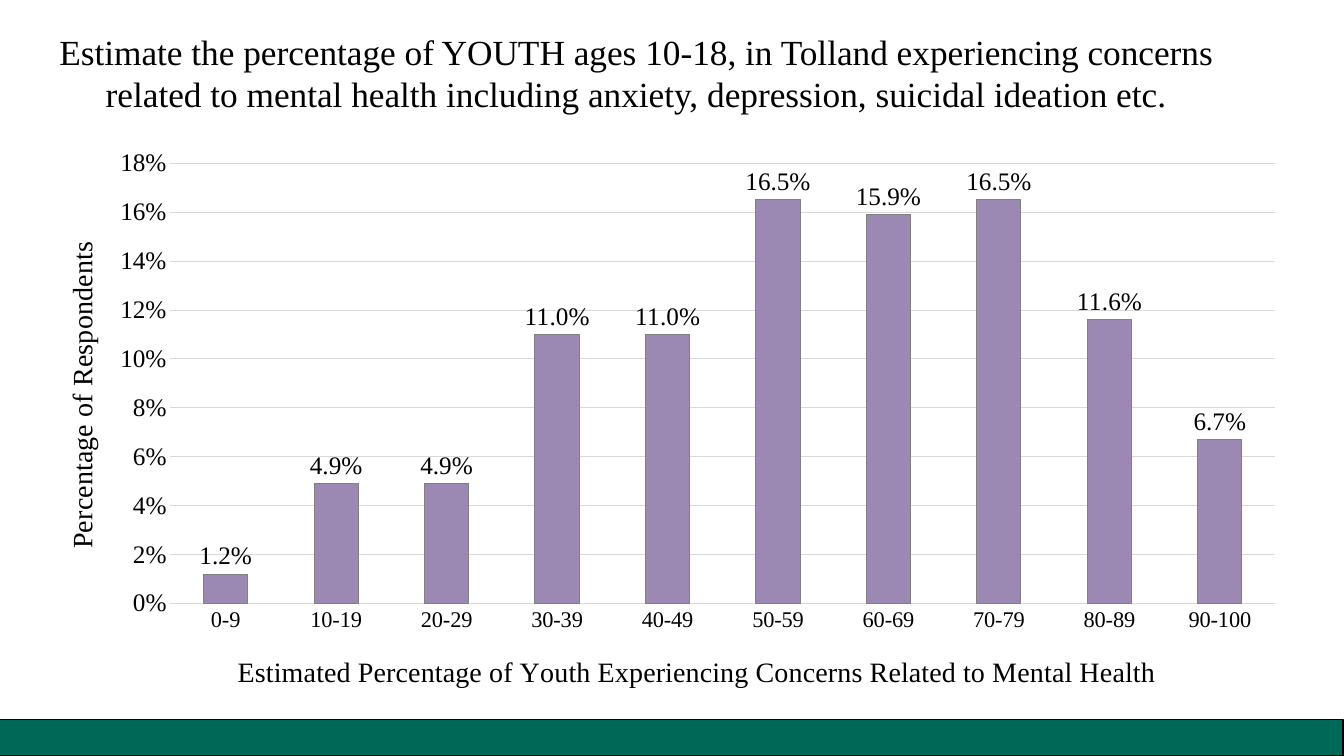
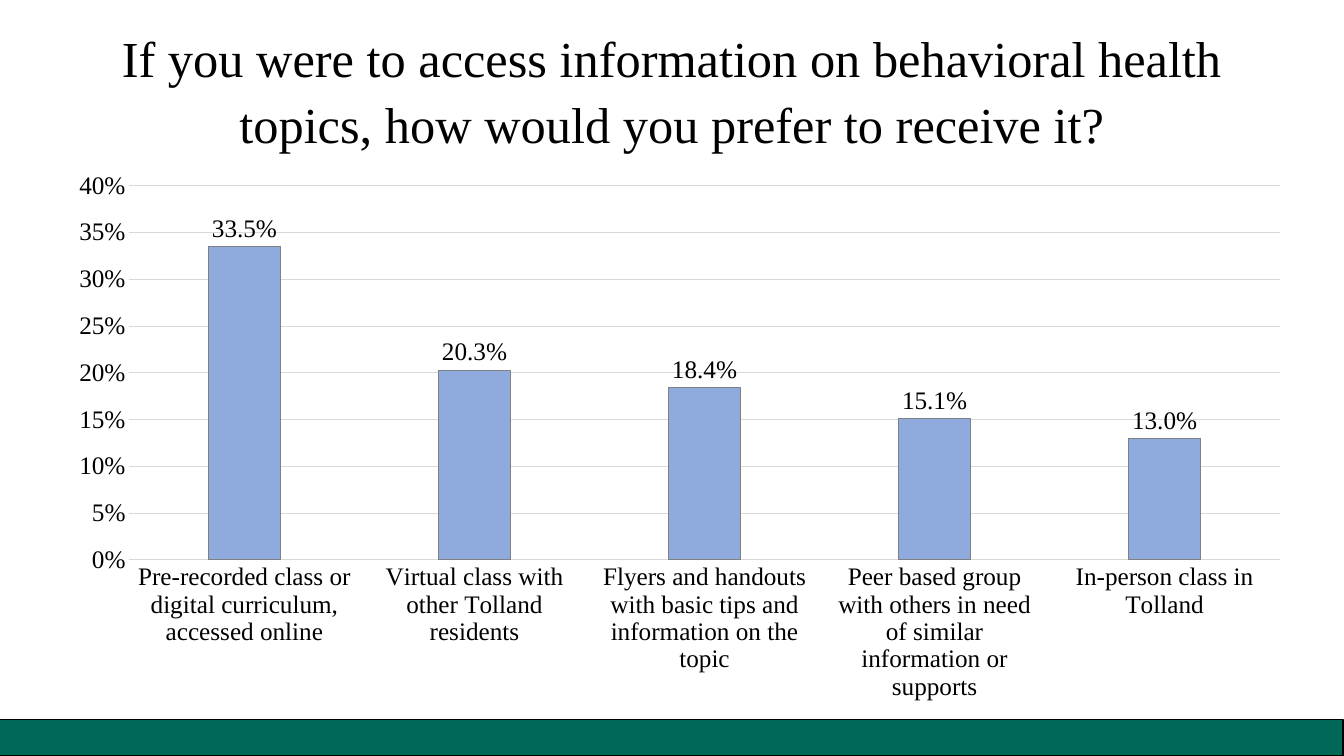
import pptx
import pptx.chart.data
import pptx.dml.color
import pptx.enum.chart
import pptx.enum.shapes
import pptx.enum.text
import pptx.oxml
import pptx.oxml.ns
import pptx.util

Inches = pptx.util.Inches
Pt = pptx.util.Pt
RGBColor = pptx.dml.color.RGBColor
qn = pptx.oxml.ns.qn

BLACK = RGBColor(0x00, 0x00, 0x00)
GREEN = RGBColor(0x00, 0x68, 0x57)
PURPLE = RGBColor(0x9B, 0x89, 0xB3)
BLUE = RGBColor(0x8F, 0xAA, 0xDC)
GRID = RGBColor(0xD9, 0xD9, 0xD9)
OUTLINE = RGBColor(0x80, 0x80, 0x80)
FONT = "Times New Roman"
TITLE_ONLY = 5


def set_font(font, size):
    font.name = FONT
    font.size = Pt(size)
    font.bold = False
    font.color.rgb = BLACK


def set_line(line, color, width=0.75):
    line.color.rgb = color
    line.width = Pt(width)


def set_layout(parent, **fractions):
    """Place a chart part by fractions of the chart's width and height."""
    layout = parent.find(qn("c:layout"))
    if layout is None:
        layout = pptx.oxml.parse_xml(
            '<c:layout xmlns:c="%s"/>' % pptx.oxml.ns.nsuri("c"))
        parent.insert(0 if parent.find(qn("c:tx")) is None else 1, layout)
    manual = layout.makeelement(qn("c:manualLayout"), {})
    layout.append(manual)
    settings = {"xMode": "edge", "yMode": "edge", **fractions}
    if "w" in fractions:
        settings = {"layoutTarget": "inner", **settings}
    for tag, value in settings.items():
        manual.append(manual.makeelement(qn("c:" + tag), {"val": str(value)}))


def add_slide(prs, title, left, top, size, spacing, anchor):
    s = prs.slides.add_slide(prs.slide_layouts[TITLE_ONLY])
    band = s.shapes.add_shape(
        pptx.enum.shapes.MSO_SHAPE.RECTANGLE,
        Inches(-0.01), Inches(7.14), Inches(13.33), Inches(0.36))
    band.shadow.inherit = False
    band.fill.solid()
    band.fill.fore_color.rgb = GREEN
    set_line(band.line, BLACK, 1)

    sp = s.shapes.title
    sp.left, sp.top = Inches(left), Inches(top)
    sp.width, sp.height = Inches(11.71), Inches(1.43)
    tf = sp.text_frame
    tf.text = title
    tf.word_wrap = True
    tf.auto_size = pptx.enum.text.MSO_AUTO_SIZE.NONE
    tf.vertical_anchor = anchor
    p = tf.paragraphs[0]
    p.alignment = pptx.enum.text.PP_ALIGN.CENTER
    p.line_spacing = spacing
    set_font(p.font, size)
    return s


def add_axis_title(axis, text, x, y, rotation=0):
    tf = axis.axis_title.text_frame
    tf.text = text
    set_font(tf.paragraphs[0].font, 20)
    title = axis.axis_title._element
    body = next(title.iter(qn("a:bodyPr")))
    body.set("rot", str(rotation * 60000))
    body.set("vert", "horz")
    set_layout(title, x=x, y=y)


def add_column_chart(s, box, values, color, gap, overlap, top, step, plot_box,
                     category_size=18):
    data = pptx.chart.data.CategoryChartData(number_format="0.0%")
    data.categories = list(values)
    data.add_series("Series 1", list(values.values()))
    chart = s.shapes.add_chart(
        pptx.enum.chart.XL_CHART_TYPE.COLUMN_CLUSTERED,
        *map(Inches, box), data).chart
    chart.has_legend = False
    chart.has_title = False
    set_font(chart.font, 18)

    tick_mark = pptx.enum.chart.XL_TICK_MARK
    for axis, size in ((chart.category_axis, category_size),
                       (chart.value_axis, 18)):
        axis.major_tick_mark = tick_mark.NONE
        axis.minor_tick_mark = tick_mark.NONE
        set_font(axis.tick_labels.font, size)
    set_line(chart.category_axis.format.line, GRID)

    axis = chart.value_axis
    axis.minimum_scale, axis.maximum_scale, axis.major_unit = 0, top, step
    axis.format.line.fill.background()
    set_line(axis.major_gridlines.format.line, GRID)
    axis.tick_labels.number_format = "0%"
    axis.tick_labels.number_format_is_linked = False

    plot = chart.plots[0]
    plot.gap_width, plot.overlap = gap, overlap
    plot.vary_by_categories = False
    plot.has_data_labels = True
    labels = plot.data_labels
    labels.show_value = True
    labels.number_format = "0.0%"
    labels.number_format_is_linked = False
    labels.position = pptx.enum.chart.XL_LABEL_POSITION.OUTSIDE_END
    set_font(labels.font, 18)

    bars = plot.series[0].format
    bars.fill.solid()
    bars.fill.fore_color.rgb = color
    set_line(bars.line, OUTLINE)
    set_layout(next(chart._chartSpace.iter(qn("c:plotArea"))),
               **dict(zip("xywh", plot_box)))
    return chart


def add_youth_slide(prs):
    s = add_slide(
        prs,
        "Estimate the percentage of YOUTH ages 10-18, in Tolland experiencing "
        "concerns related to mental health including anxiety, depression, "
        "suicidal ideation etc.",
        0.46, 0.25, 25.2, 1, pptx.enum.text.MSO_ANCHOR.TOP)
    values = {
        "0-9": 0.012, "10-19": 0.049, "20-29": 0.049, "30-39": 0.11,
        "40-49": 0.11, "50-59": 0.165, "60-69": 0.159, "70-79": 0.165,
        "80-89": 0.116, "90-100": 0.067,
    }
    chart = add_column_chart(
        s, (0.46, 1.34, 12.31, 5.6), values, PURPLE, gap=150, overlap=0,
        top=0.18, step=0.02, plot_box=(0.1, 0.05, 0.89, 0.78),
        category_size=16)
    add_axis_title(
        chart.category_axis,
        "Estimated Percentage of Youth Experiencing Concerns Related to "
        "Mental Health", 0.15, 0.91)
    add_axis_title(chart.value_axis, "Percentage of Respondents",
                   0.01, 0.18, rotation=-90)


def add_preference_slide(prs):
    s = add_slide(
        prs,
        "If you were to access information on behavioral health topics, "
        "how would you prefer to receive it?",
        0.81, 0.15, 36, 1.1, pptx.enum.text.MSO_ANCHOR.MIDDLE)
    values = {
        "Pre-recorded class or digital curriculum, accessed online": 0.335,
        "Virtual class with other Tolland residents": 0.203,
        "Flyers and handouts with basic tips and information on the topic":
            0.184,
        "Peer based group with others in need of similar information or "
        "supports": 0.151,
        "In-person class in Tolland": 0.13,
    }
    add_column_chart(
        s, (0.54, 1.57, 12.4, 5.46), values, BLUE, gap=219, overlap=-27,
        top=0.4, step=0.05, plot_box=(0.06, 0.05, 0.92, 0.68))


def main():
    prs = pptx.Presentation()
    prs.slide_width, prs.slide_height = Inches(13.33), Inches(7.5)
    add_youth_slide(prs)
    add_preference_slide(prs)
    prs.save("out.pptx")


if __name__ == "__main__":
    main()
